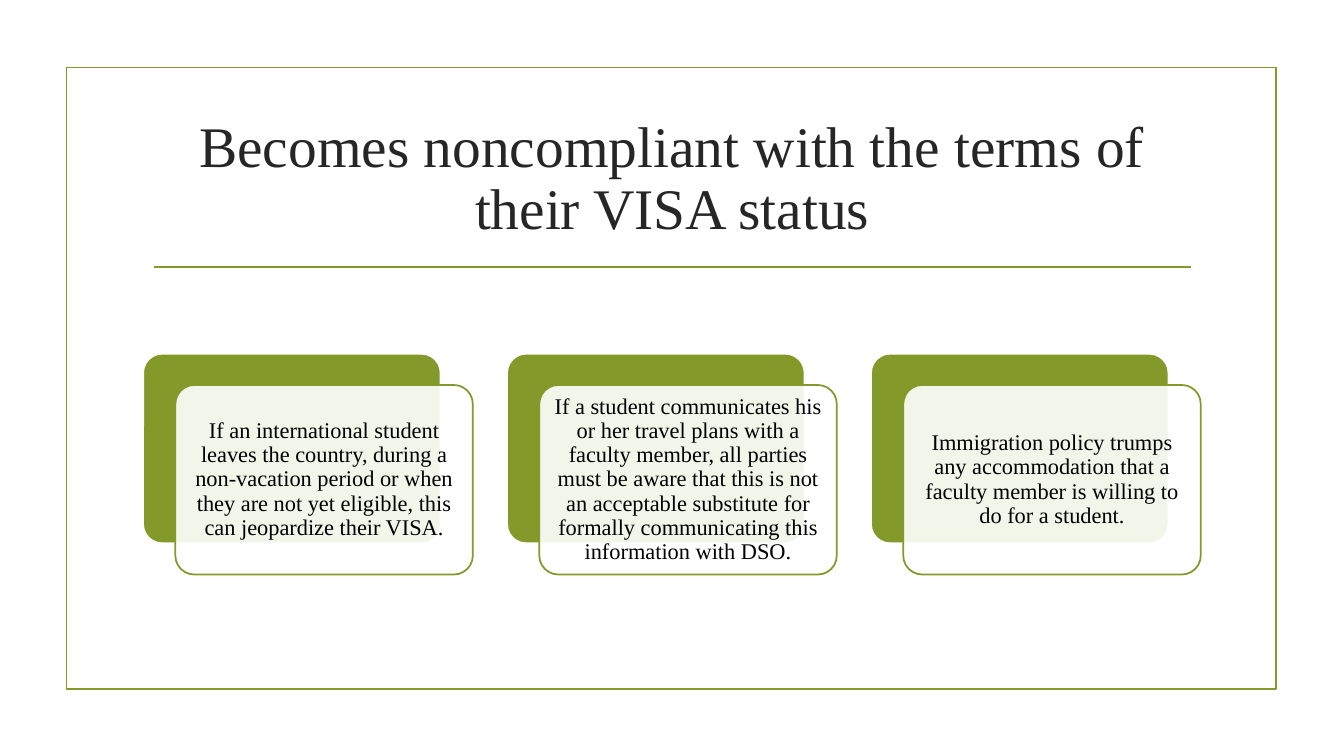
from lxml.etree import SubElement
from pptx import Presentation
from pptx.dml.color import RGBColor
from pptx.enum.shapes import MSO_CONNECTOR, MSO_SHAPE
from pptx.enum.text import MSO_ANCHOR, PP_ALIGN
from pptx.oxml.ns import qn
from pptx.util import Inches, Pt

THEME = {
    "font": "Times New Roman",
    "green": RGBColor(0x83, 0x99, 0x2A),
    "white": RGBColor(0xFF, 0xFF, 0xFF),
    "title": RGBColor(0x26, 0x26, 0x26),
    "body": RGBColor(0, 0, 0),
    "title_size": Pt(41),
    "body_size": Pt(16),
    "line_width": Pt(1.25),
}
CARD_TEXTS = [
    "If an international student leaves the country, during a non-vacation period "
    "or when they are not yet eligible, this can jeopardize their VISA.",
    "If a student communicates his or her travel plans with a faculty member, all "
    "parties must be aware that this is not an acceptable substitute for formally "
    "communicating this information with DSO.",
    "Immigration policy trumps any accommodation that a faculty member is willing "
    "to do for a student.",
]

presentation = Presentation()
presentation.slide_width, presentation.slide_height = Inches(13.33), Inches(7.5)
slide = presentation.slides.add_slide(presentation.slide_layouts[6])

# One column and one row are one percent of the slide
COLUMN = presentation.slide_width / 100
ROW = presentation.slide_height / 100


def add_box(kind, left, top, width, height, fill, line):
    box = (int(left * COLUMN), int(top * ROW), int(width * COLUMN), int(height * ROW))
    shape = slide.shapes.add_shape(kind, *box)
    shape.shadow.inherit = False
    if fill is None:
        shape.fill.background()
    else:
        shape.fill.solid()
        shape.fill.fore_color.rgb = fill
    if line is None:
        shape.line.fill.background()
    else:
        shape.line.color.rgb = line
        shape.line.width = THEME["line_width"]
    return shape


def write_text(shape, text, size, color, inset):
    frame_format = {
        "word_wrap": True, "vertical_anchor": MSO_ANCHOR.MIDDLE,
        "margin_left": inset, "margin_right": inset,
        "margin_top": inset, "margin_bottom": inset,
    }
    for name, value in frame_format.items():
        setattr(shape.text_frame, name, value)
    paragraph = shape.text_frame.paragraphs[0]
    paragraph.text = text
    for name, value in {"alignment": PP_ALIGN.CENTER, "line_spacing": 0.9}.items():
        setattr(paragraph, name, value)
    for name, value in {"name": THEME["font"], "size": size}.items():
        setattr(paragraph.font, name, value)
    paragraph.font.color.rgb = color


# Frame around the slide
add_box(MSO_SHAPE.RECTANGLE, 4.95, 8.93, 90.02, 82.27, None, THEME["green"])

# Title and the rule below it
title = add_box(MSO_SHAPE.RECTANGLE, 10.65, 14.27, 78.77, 19.07, None, None)
write_text(title, "Becomes noncompliant with the terms of their VISA status",
           THEME["title_size"], THEME["title"], Inches(0.1))
rule_y = int(35.33 * ROW)
rule = slide.shapes.add_connector(
    MSO_CONNECTOR.STRAIGHT, int(11.48 * COLUMN), rule_y, int(88.6 * COLUMN), rule_y)
rule.line.color.rgb = THEME["green"]
rule.line.width = THEME["line_width"]
SubElement(rule._element.spPr, qn("a:effectLst"))

# Cards: a green panel with a translucent text panel stepped down and right
CARD_LEFT, CARD_TOP, CARD_PITCH = 10.65, 46.8, 27.08
CARD_WIDTH, CARD_HEIGHT = 22.13, 25.07
STEP_X, STEP_Y = 2.4, 4.13
for index, text in enumerate(CARD_TEXTS):
    left = CARD_LEFT + index * CARD_PITCH
    back = add_box(MSO_SHAPE.ROUNDED_RECTANGLE, left, CARD_TOP,
                   CARD_WIDTH, CARD_HEIGHT, THEME["green"], THEME["white"])
    front = add_box(MSO_SHAPE.ROUNDED_RECTANGLE, left + STEP_X, CARD_TOP + STEP_Y,
                    CARD_WIDTH, CARD_HEIGHT, THEME["white"], THEME["green"])
    for panel in (back, front):
        panel.adjustments[0] = 0.1
    fill_color = front._element.spPr.find(qn("a:solidFill"))[0]
    SubElement(fill_color, qn("a:alpha"), val="90000")
    write_text(front, text, THEME["body_size"], THEME["body"], Inches(0.07))

presentation.save("out.pptx")
